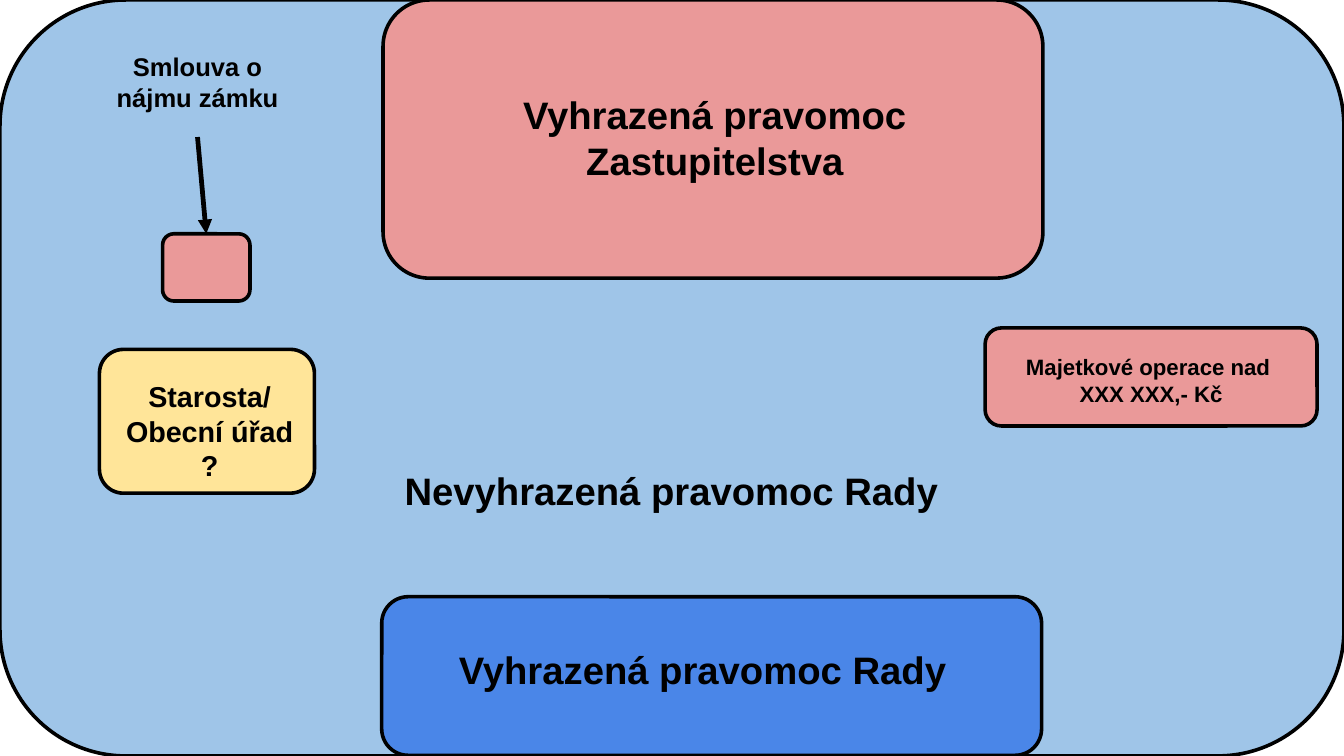
from lxml.etree import SubElement
from pptx import Presentation
from pptx.dml.color import RGBColor
from pptx.enum.shapes import MSO_CONNECTOR, MSO_SHAPE
from pptx.enum.text import MSO_ANCHOR, PP_ALIGN
from pptx.oxml.ns import qn
from pptx.util import Inches, Pt

SLIDE_WIDTH = 10
SLIDE_HEIGHT = SLIDE_WIDTH * 9 / 16

BLACK = "000000"
LIGHT_BLUE = "9FC5E8"
BLUE = "4A86E8"
PINK = "EA9999"
YELLOW = "FFE599"


def color(hex_string):
    return RGBColor.from_string(hex_string)


def add_box(slide, left, top, width, height, fill):
    """Add a rounded rectangle with a black outline."""
    shape = slide.shapes.add_shape(
        MSO_SHAPE.ROUNDED_RECTANGLE,
        Inches(left), Inches(top), Inches(width), Inches(height))
    shape.shadow.inherit = False
    shape.fill.solid()
    shape.fill.fore_color.rgb = color(fill)
    shape.line.color.rgb = color(BLACK)
    shape.line.width = Pt(1.92)
    return shape


def add_text(slide, text, left, top, width, height, size=20.5,
             align=PP_ALIGN.CENTER):
    """Add bold text, one paragraph for each line of the string."""
    shape = slide.shapes.add_textbox(
        Inches(left), Inches(top), Inches(width), Inches(height))
    frame = shape.text_frame
    frame.word_wrap = True
    frame.vertical_anchor = MSO_ANCHOR.TOP
    frame.margin_left = frame.margin_right = Inches(0.09)
    frame.margin_top = frame.margin_bottom = Inches(0.09)
    frame.text = text
    for paragraph in frame.paragraphs:
        paragraph.alignment = align
        for run in paragraph.runs:
            run.font.name = "Arial"
            run.font.size = Pt(size)
            run.font.bold = True
            run.font.color.rgb = color(BLACK)
    return shape


def add_arrow(slide, source, target):
    """Join the bottom of one shape to the top of another."""
    connector = slide.shapes.add_connector(MSO_CONNECTOR.STRAIGHT, 0, 0, 0, 0)
    connector.begin_connect(source, 2)
    connector.end_connect(target, 0)
    connector.line.color.rgb = color(BLACK)
    connector.line.width = Pt(2.56)
    SubElement(connector.line._get_or_add_ln(), qn("a:tailEnd"), type="triangle")
    SubElement(connector._element.spPr, qn("a:effectLst"))
    return connector


def main():
    presentation = Presentation()
    presentation.slide_width = Inches(SLIDE_WIDTH)
    presentation.slide_height = Inches(SLIDE_HEIGHT)
    slide = presentation.slides.add_slide(presentation.slide_layouts[6])

    # Council powers as the whole area, with the reserved powers inside
    add_box(slide, 0, 0, SLIDE_WIDTH, SLIDE_HEIGHT, LIGHT_BLUE)
    add_box(slide, 2.85, 0, 4.91, 2.07, PINK)
    add_box(slide, 2.84, 4.44, 4.91, 1.18, BLUE)
    add_text(slide, "Vyhrazená pravomoc Rady", 2.92, 4.72, 4.62, 0.73)
    add_text(slide, "Vyhrazená pravomoc Zastupitelstva", 3.01, 0.59, 4.62, 0.73)
    add_text(slide, "Nevyhrazená pravomoc Rady", 2.92, 3.39, 5.03, 0.5,
             align=PP_ALIGN.LEFT)

    # Castle lease target
    lease_box = add_box(slide, 1.21, 1.74, 0.65, 0.5, PINK)

    # Property operations
    add_box(slide, 7.33, 2.44, 2.47, 0.73, PINK)
    add_text(slide, "Majetkové operace nad \nXXX XXX,- Kč",
             7.2, 2.54, 2.73, 0.5, size=11.9)

    # Castle lease label and its arrow
    lease_label = add_text(slide, "Smlouva o nájmu zámku",
                           0.67, 0.29, 1.6, 0.73, size=13.7)
    add_arrow(slide, lease_label, lease_box)

    # Mayor and municipal office
    add_box(slide, 0.74, 2.6, 1.6, 1.07, YELLOW)
    add_text(slide, "Starosta/\nObecní úřad\n?", -0.73, 2.73, 4.58, 0.73, size=15.4)

    presentation.save("out.pptx")


if __name__ == "__main__":
    main()
